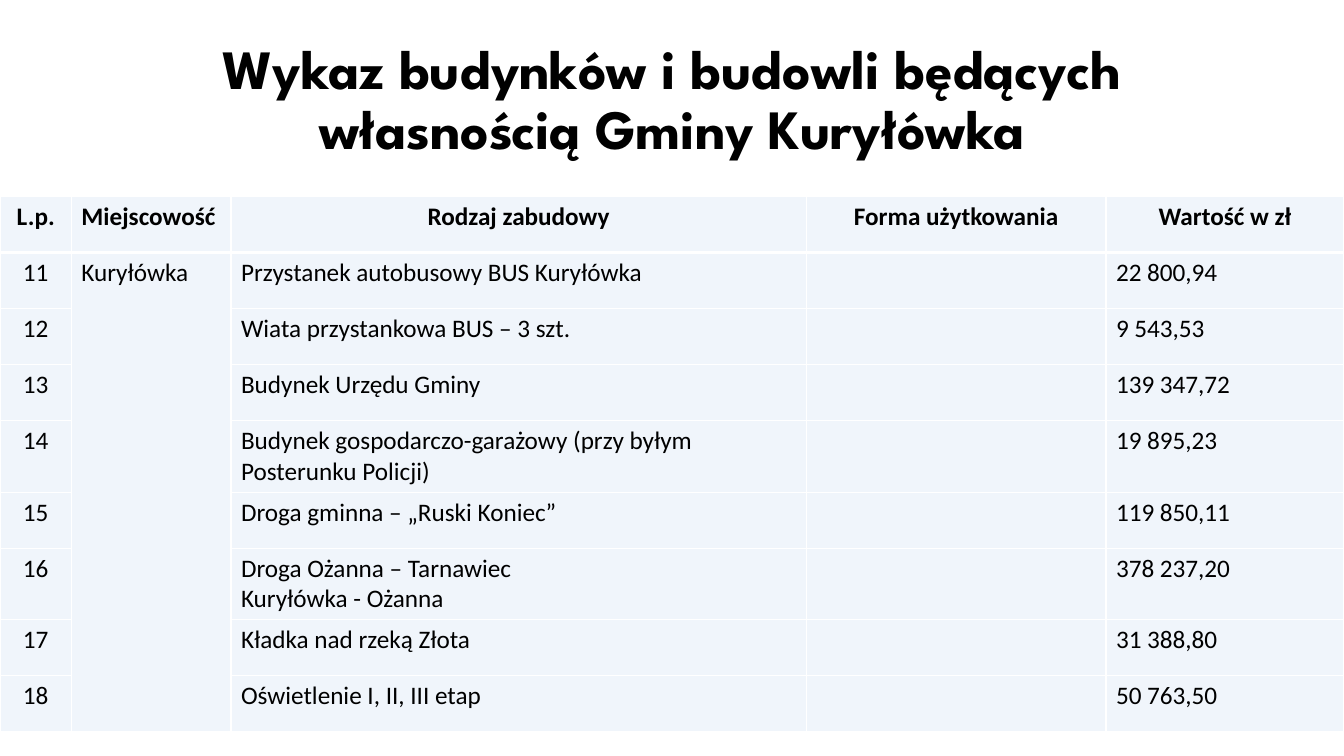
from lxml import etree
from pptx import Presentation
from pptx.dml.color import RGBColor
from pptx.enum.text import MSO_ANCHOR, MSO_AUTO_SIZE, PP_ALIGN
from pptx.oxml.ns import qn
from pptx.util import Pt

LEFT, CENTER = PP_ALIGN.LEFT, PP_ALIGN.CENTER
MIDDLE = MSO_ANCHOR.MIDDLE
NO_AUTOFIT = MSO_AUTO_SIZE.NONE
TITLE_ONLY = 5

HEADINGS = ["L.p.", "Miejscowość", "Rodzaj zabudowy", "Forma użytkowania", "Wartość w zł"]
HEADING_ALIGNS = [CENTER, LEFT, CENTER, CENTER, CENTER]
ENTRY_ALIGNS = [CENTER, LEFT, LEFT, LEFT, LEFT]
COLUMN_WIDTHS = [51, 114, 411, 214, 170]
FIRST_NUMBER = 11
LOCALITY = "Kuryłówka"
BUILDINGS = [
    (["Przystanek autobusowy BUS Kuryłówka"], "22 800,94"),
    (["Wiata przystankowa BUS – 3 szt."], "9 543,53"),
    (["Budynek Urzędu Gminy"], "139 347,72"),
    (["Budynek gospodarczo-garażowy (przy byłym Posterunku Policji)"], "19 895,23"),
    (["Droga gminna – „Ruski Koniec”"], "119 850,11"),
    (["Droga Ożanna – Tarnawiec", "Kuryłówka - Ożanna"], "378 237,20"),
    (["Kładka nad rzeką Złota"], "31 388,80"),
    (["Oświetlenie I, II, III etap"], "50 763,50"),
]


def colour(code):
    return RGBColor.from_string(code)


class Deck:
    title_font, body_font = "League Spartan", "Calibri"
    ink, paper, tint = "000000", "FFFFFF", "5B9BD5"
    tint_alpha = 9000

    def __init__(self, width, height):
        self.presentation = Presentation()
        self.presentation.slide_width = Pt(width)
        self.presentation.slide_height = Pt(height)
        self.slide = None

    def add_slide(self):
        layout = self.presentation.slide_layouts[TITLE_ONLY]
        self.slide = self.presentation.slides.add_slide(layout)
        self.slide.background.fill.solid()
        self.slide.background.fill.fore_color.rgb = colour(self.paper)

    def run(self, paragraph, words, font, size, bold):
        run = paragraph.add_run()
        run.text = words
        run.font.name = font
        run.font.size = Pt(size)
        run.font.bold = bold
        run.font.color.rgb = colour(self.ink)

    def title(self, words, left, top, width, height, top_inset):
        heading = self.slide.shapes.title
        heading.left, heading.top = Pt(left), Pt(top)
        heading.width, heading.height = Pt(width), Pt(height)
        frame = heading.text_frame
        frame.word_wrap = True
        frame.auto_size = NO_AUTOFIT
        frame.vertical_anchor = MIDDLE
        frame.margin_top = Pt(top_inset)
        paragraph = frame.paragraphs[0]
        paragraph.alignment = CENTER
        paragraph.line_spacing = 0.9
        self.run(paragraph, words, self.title_font, 39.6, True)

    def table(self, left, top, widths, row_height, row_count):
        frame = self.slide.shapes.add_table(
            row_count, len(widths), Pt(left), Pt(top),
            Pt(sum(widths)), Pt(row_height * row_count))
        table = frame.table
        table.first_row = table.horz_banding = False
        for column, width in zip(table.columns, widths):
            column.width = Pt(width)
        for row in table.rows:
            row.height = Pt(row_height)
        return table

    def border(self, cell, side, width):
        properties = cell._tc.get_or_add_tcPr()
        line = etree.SubElement(properties, qn(f"a:ln{side}"), w=str(Pt(width)))
        fill = etree.SubElement(line, qn("a:solidFill"))
        etree.SubElement(fill, qn("a:srgbClr"), val=self.paper)

    def cell(self, cell, lines, align, bold, top_rule, bottom_rule):
        for side, width in zip("LRTB", (1, 1, top_rule, bottom_rule)):
            self.border(cell, side, width)
        cell.fill.solid()
        cell.fill.fore_color.rgb = colour(self.tint)
        tint = cell._tc.tcPr.find(f"{qn('a:solidFill')}/{qn('a:srgbClr')}")
        etree.SubElement(tint, qn("a:alpha"), val=str(self.tint_alpha))
        frame = cell.text_frame
        for index, words in enumerate(lines):
            paragraph = frame.add_paragraph() if index else frame.paragraphs[0]
            paragraph.alignment = align
            self.run(paragraph, words, self.body_font, 18, bold)

    def save(self):
        self.presentation.save("out.pptx")


def main():
    deck = Deck(960, 540)
    deck.add_slide()
    deck.title("Wykaz budynków i budowli będących własnością Gminy Kuryłówka",
               66, -1.5, 828, 104.4, 47)

    register = deck.table(0, 140.4, COLUMN_WIDTHS, 40, len(BUILDINGS) + 1)
    for column, (heading, align) in enumerate(zip(HEADINGS, HEADING_ALIGNS)):
        deck.cell(register.cell(0, column), [heading], align, True, 1, 3)

    for row, (kind, value) in enumerate(BUILDINGS, 1):
        number = str(FIRST_NUMBER + row - 1)
        locality = [LOCALITY] if row == 1 else []
        entries = [[number], locality, kind, [], [value]]
        top_rule = 3 if row == 1 else 1
        for column, (lines, align) in enumerate(zip(entries, ENTRY_ALIGNS)):
            deck.cell(register.cell(row, column), lines, align, False, top_rule, 1)
    register.cell(1, 1).merge(register.cell(len(BUILDINGS), 1))
    deck.save()


if __name__ == "__main__":
    main()
